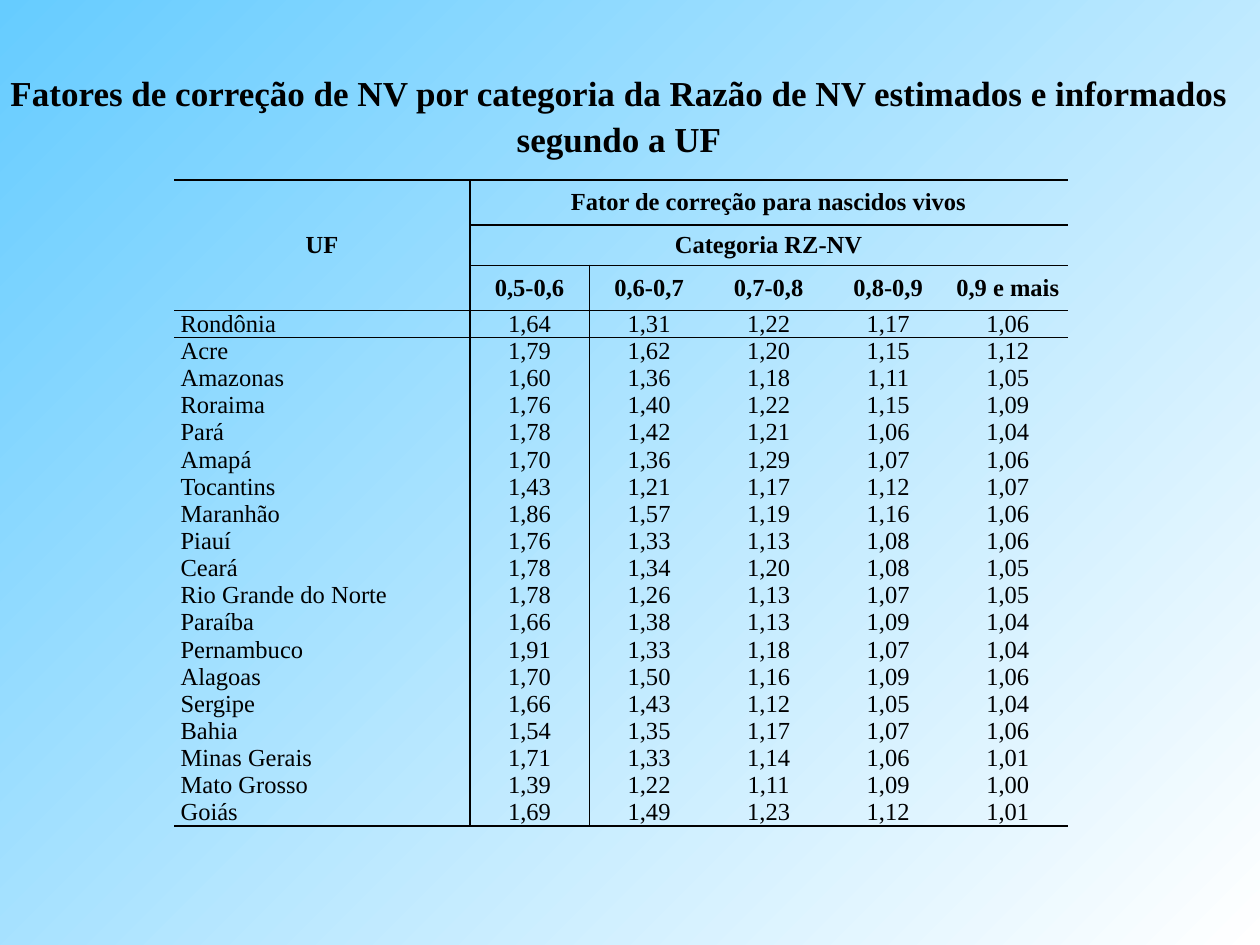
import pptx
import pptx.util
import pptx.dml.color
import pptx.enum.text
import pptx.oxml
from dataclasses import dataclass
from pptx.util import Cm

ALIGN = pptx.enum.text.PP_ALIGN


@dataclass(frozen=True)
class Theme:
    font: str = "Times New Roman"
    ink: str = "000000"
    sky: str = "66CCFF"
    pale: str = "FFFFFF"
    title: int = 20
    body: int = 14
    rule: int = 1
    plain: str = "{2D5ABB26-0587-4C30-8999-92F81FD0307C}"


THEME = Theme()
TITLE = ("Fatores de correção de NV por categoria da Razão de NV estimados e informados\n"
         "segundo a UF")
HEAD = [
    ["UF", "Fator de correção para nascidos vivos", "", "", "", ""],
    ["", "Categoria RZ-NV", "", "", "", ""],
    ["", "0,5-0,6", "0,6-0,7", "0,7-0,8", "0,8-0,9", "0,9 e mais"],
]
BODY = [
    ["Rondônia", "1,64", "1,31", "1,22", "1,17", "1,06"],
    ["Acre", "1,79", "1,62", "1,20", "1,15", "1,12"],
    ["Amazonas", "1,60", "1,36", "1,18", "1,11", "1,05"],
    ["Roraima", "1,76", "1,40", "1,22", "1,15", "1,09"],
    ["Pará", "1,78", "1,42", "1,21", "1,06", "1,04"],
    ["Amapá", "1,70", "1,36", "1,29", "1,07", "1,06"],
    ["Tocantins", "1,43", "1,21", "1,17", "1,12", "1,07"],
    ["Maranhão", "1,86", "1,57", "1,19", "1,16", "1,06"],
    ["Piauí", "1,76", "1,33", "1,13", "1,08", "1,06"],
    ["Ceará", "1,78", "1,34", "1,20", "1,08", "1,05"],
    ["Rio Grande do Norte", "1,78", "1,26", "1,13", "1,07", "1,05"],
    ["Paraíba", "1,66", "1,38", "1,13", "1,09", "1,04"],
    ["Pernambuco", "1,91", "1,33", "1,18", "1,07", "1,04"],
    ["Alagoas", "1,70", "1,50", "1,16", "1,09", "1,06"],
    ["Sergipe", "1,66", "1,43", "1,12", "1,05", "1,04"],
    ["Bahia", "1,54", "1,35", "1,17", "1,07", "1,06"],
    ["Minas Gerais", "1,71", "1,33", "1,14", "1,06", "1,01"],
    ["Mato Grosso", "1,39", "1,22", "1,11", "1,09", "1,00"],
    ["Goiás", "1,69", "1,49", "1,23", "1,12", "1,01"],
]


def tint(color, code):
    color.rgb = pptx.dml.color.RGBColor.from_string(code)


def style(frame, size, bold, align=ALIGN.CENTER):
    for para in frame.paragraphs:
        para.alignment = align
        for font in [para.font] + [run.font for run in para.runs]:
            font.name, font.size, font.bold = THEME.font, pptx.util.Pt(size), bold
            tint(font.color, THEME.ink)


def paint(slide):
    """Give the slide its diagonal gradient."""
    fill = slide.background.fill
    fill.gradient()
    fill.gradient_angle = 315
    for stop, code in zip(fill.gradient_stops, (THEME.sky, THEME.pale)):
        tint(stop.color, code)


def add_title(slide):
    box = slide.shapes.add_textbox(Cm(-0.13), Cm(1.32), Cm(25.22), Cm(3))
    frame = box.text_frame
    frame.word_wrap = False
    frame.text = TITLE
    style(frame, THEME.title, True)
    for para in frame.paragraphs:
        para.space_before = pptx.util.Pt(2)


def edge(cell, sides):
    """Rule the given sides, a subset of "LRTB" in that order."""
    props = cell._tc.get_or_add_tcPr()
    for side in sides:
        props.append(pptx.oxml.parse_xml(
            '<a:ln%s xmlns:a="http://schemas.openxmlformats.org/drawingml/2006/main" w="%d">'
            '<a:solidFill><a:srgbClr val="%s"/></a:solidFill></a:ln%s>'
            % (side, pptx.util.Pt(THEME.rule), THEME.ink, side)))


def sides(row, col, last):
    """Lines frame the header, split off the names and close the table."""
    head = len(HEAD)
    inner = col > 0 and row < head
    rules = {
        "L": col == 1,
        "R": col == 0,
        "T": row in (0, head) or inner,
        "B": row in (head - 1, last) or inner,
    }
    return [side for side, drawn in rules.items() if drawn]


def fill_cell(cell, text, bold, align):
    cell.margin_left = cell.margin_right = Cm(0.13)
    cell.margin_top = cell.margin_bottom = 0
    cell.vertical_anchor = pptx.enum.text.MSO_ANCHOR.MIDDLE
    cell.text_frame.text = text
    style(cell.text_frame, THEME.body, bold, align)


def add_grid(slide):
    rows = HEAD + BODY
    wide = [5.96] + [2.41] * 5
    high = [0.91, 0.81, 0.91] + [0.46] * len(BODY)
    shape = slide.shapes.add_table(len(rows), len(wide), Cm(3.51), Cm(3.63),
                                   Cm(sum(wide)), Cm(sum(high)))
    grid = shape.table
    grid.first_row = grid.horz_banding = False
    grid._tbl.tblPr[0].text = THEME.plain
    for column, size in zip(grid.columns, wide):
        column.width = Cm(size)
    for line, size in zip(grid.rows, high):
        line.height = Cm(size)
    for row, texts in enumerate(rows):
        head = row < len(HEAD)
        for col, text in enumerate(texts):
            cell = grid.cell(row, col)
            align = ALIGN.CENTER if head or col else ALIGN.LEFT
            fill_cell(cell, text, head, align)
            edge(cell, sides(row, col, len(rows) - 1))
            cell.fill.background()
    grid.cell(0, 0).merge(grid.cell(2, 0))
    for row in (0, 1):
        grid.cell(row, 1).merge(grid.cell(row, 5))


def main():
    deck = pptx.Presentation()
    deck.slide_width, deck.slide_height = Cm(25.4), Cm(19.05)
    slide = deck.slides.add_slide(deck.slide_layouts[6])
    paint(slide)
    add_grid(slide)
    add_title(slide)
    deck.save("out.pptx")


if __name__ == "__main__":
    main()
